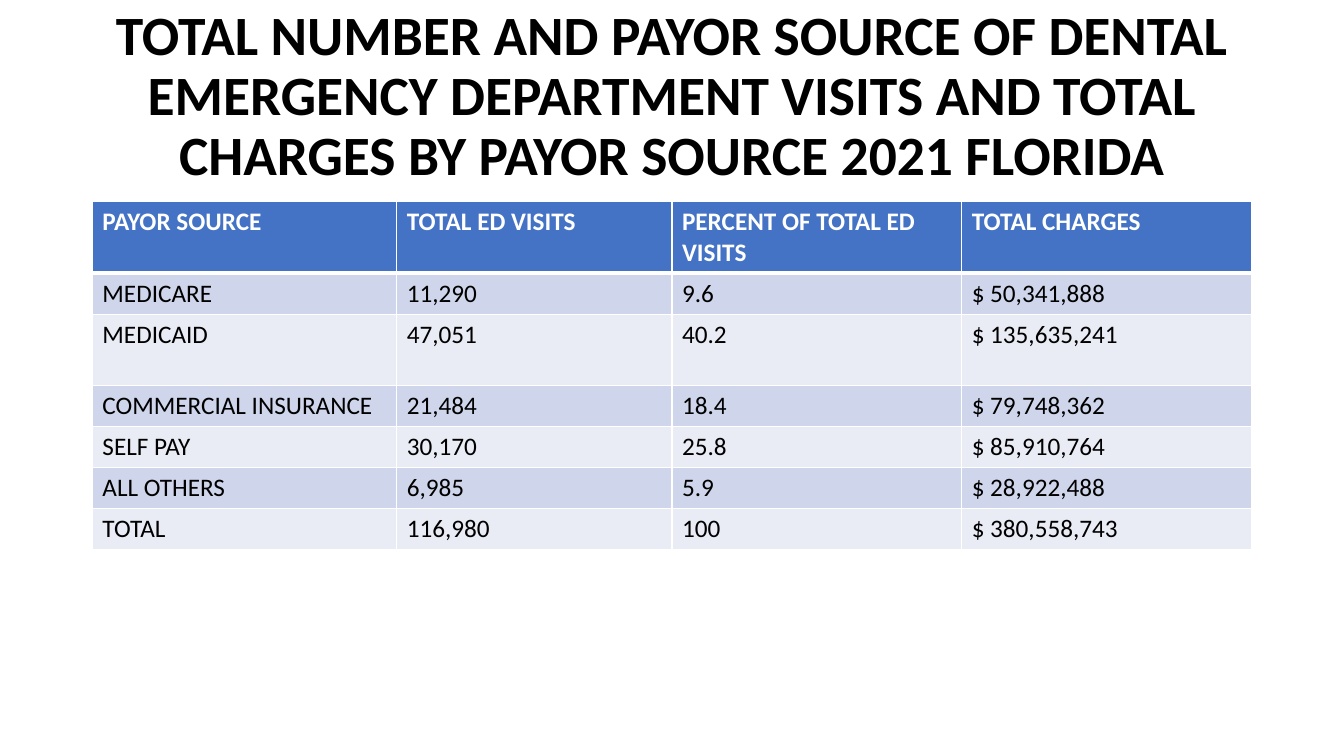
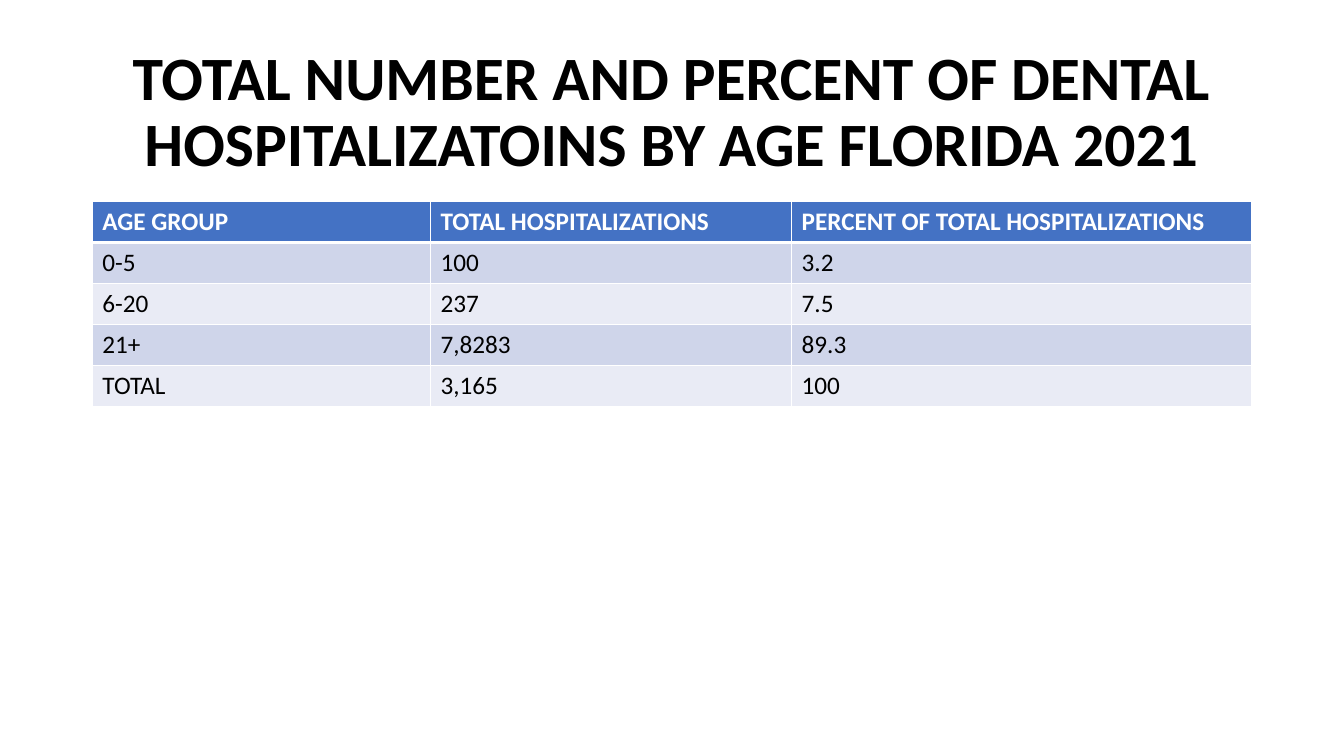
from dataclasses import dataclass

import pptx
import pptx.dml.color
import pptx.enum.text
import pptx.oxml
import pptx.oxml.ns
import pptx.util

EMU_PER_PX = 9525
PAGE_WIDTH, PAGE_HEIGHT = 1280, 720
LEFT, CONTENT_WIDTH = 88, 1104
TITLE_BOTTOM, TABLE_TOP = 178, 192
ROW_HEIGHT = 39
TITLE_ONLY_LAYOUT = 5
FONT = "Calibri"
COLORS = {
    "title": "000000",
    "header": "4472C4",
    "header_text": "FFFFFF",
    "odd_row": "CFD5EA",
    "even_row": "E9EBF5",
    "body_text": "000000",
    "border": "FFFFFF",
}


@dataclass(frozen=True)
class TablePage:
    title: str
    title_top: int
    title_size: float
    column_widths: tuple[int, ...]
    tall_rows: dict[int, int]
    rows: tuple[tuple[str, ...], ...]


PAGES = (
    TablePage(
        title="TOTAL NUMBER AND PAYOR SOURCE OF DENTAL EMERGENCY DEPARTMENT VISITS "
        "AND TOTAL CHARGES BY PAYOR SOURCE 2021 FLORIDA",
        title_top=8,
        title_size=39.6,
        column_widths=(290, 262, 276, 276),
        tall_rows={0: 67, 2: 68},
        rows=(
            ("PAYOR SOURCE", "TOTAL ED VISITS", "PERCENT OF TOTAL ED VISITS", "TOTAL CHARGES"),
            ("MEDICARE", "11,290", "9.6", "$ 50,341,888"),
            ("MEDICAID", "47,051", "40.2", "$ 135,635,241"),
            ("COMMERCIAL INSURANCE", "21,484", "18.4", "$ 79,748,362"),
            ("SELF PAY", "30,170", "25.8", "$ 85,910,764"),
            ("ALL OTHERS", "6,985", "5.9", "$ 28,922,488"),
            ("TOTAL", "116,980", "100", "$ 380,558,743"),
        ),
    ),
    TablePage(
        title="TOTAL NUMBER AND PERCENT OF DENTAL HOSPITALIZATOINS BY AGE FLORIDA 2021",
        title_top=38,
        title_size=44,
        column_widths=(322, 344, 438),
        tall_rows={},
        rows=(
            ("AGE GROUP", "TOTAL HOSPITALIZATIONS", "PERCENT OF TOTAL HOSPITALIZATIONS"),
            ("0-5", "100", "3.2"),
            ("6-20", "237", "7.5"),
            ("21+", "7,8283", "89.3"),
            ("TOTAL", "3,165", "100"),
        ),
    ),
)


def px(length: int) -> pptx.util.Emu:
    return pptx.util.Emu(length * EMU_PER_PX)


def rgb(name: str) -> pptx.dml.color.RGBColor:
    return pptx.dml.color.RGBColor.from_string(COLORS[name])


def set_font(para, size: float, color: str, bold: bool) -> None:
    font = para.font
    font.name = FONT
    font.size = pptx.util.Pt(size)
    font.bold = bold
    font.color.rgb = rgb(color)


def add_title(slide, page: TablePage) -> None:
    title = slide.shapes.title
    title.left, title.top = px(LEFT), px(page.title_top)
    title.width, title.height = px(CONTENT_WIDTH), px(TITLE_BOTTOM - page.title_top)
    frame = title.text_frame
    frame.text = page.title
    frame.auto_size = pptx.enum.text.MSO_AUTO_SIZE.NONE
    frame.vertical_anchor = pptx.enum.text.MSO_ANCHOR.MIDDLE
    para = frame.paragraphs[0]
    para.alignment = pptx.enum.text.PP_ALIGN.CENTER
    para.line_spacing = 0.9
    set_font(para, page.title_size, "title", True)


def set_borders(cell, top: int, bottom: int) -> None:
    properties = cell._tc.get_or_add_tcPr()
    namespace = pptx.oxml.ns.nsdecls("a")
    sides = {"lnL": 1, "lnR": 1, "lnT": top, "lnB": bottom}
    for index, (side, points) in enumerate(sides.items()):
        line = pptx.oxml.parse_xml(
            f'<a:{side} {namespace} w="{pptx.util.Pt(points)}"><a:solidFill>'
            f'<a:srgbClr val="{COLORS["border"]}"/></a:solidFill></a:{side}>'
        )
        properties.insert(index, line)


def format_cell(cell, text: str, row_index: int) -> None:
    is_header = row_index == 0
    cell.text = text
    color = "header_text" if is_header else "body_text"
    set_font(cell.text_frame.paragraphs[0], 18, color, is_header)
    cell.fill.solid()
    band = "odd_row" if row_index % 2 else "even_row"
    cell.fill.fore_color.rgb = rgb("header" if is_header else band)
    set_borders(cell, top=3 if row_index == 1 else 1, bottom=3 if is_header else 1)


def add_data_table(slide, page: TablePage) -> None:
    heights = [page.tall_rows.get(index, ROW_HEIGHT) for index in range(len(page.rows))]
    table = slide.shapes.add_table(
        len(page.rows), len(page.column_widths),
        px(LEFT), px(TABLE_TOP), px(CONTENT_WIDTH), px(sum(heights)),
    ).table
    table.horz_banding = False
    for column, width in zip(table.columns, page.column_widths):
        column.width = px(width)
    for row_index, (row, height) in enumerate(zip(table.rows, heights)):
        row.height = px(height)
        for cell, text in zip(row.cells, page.rows[row_index]):
            format_cell(cell, text, row_index)


def main() -> None:
    deck = pptx.Presentation()
    deck.slide_width, deck.slide_height = px(PAGE_WIDTH), px(PAGE_HEIGHT)
    for page in PAGES:
        slide = deck.slides.add_slide(deck.slide_layouts[TITLE_ONLY_LAYOUT])
        add_title(slide, page)
        add_data_table(slide, page)
    deck.save("out.pptx")


if __name__ == "__main__":
    main()
